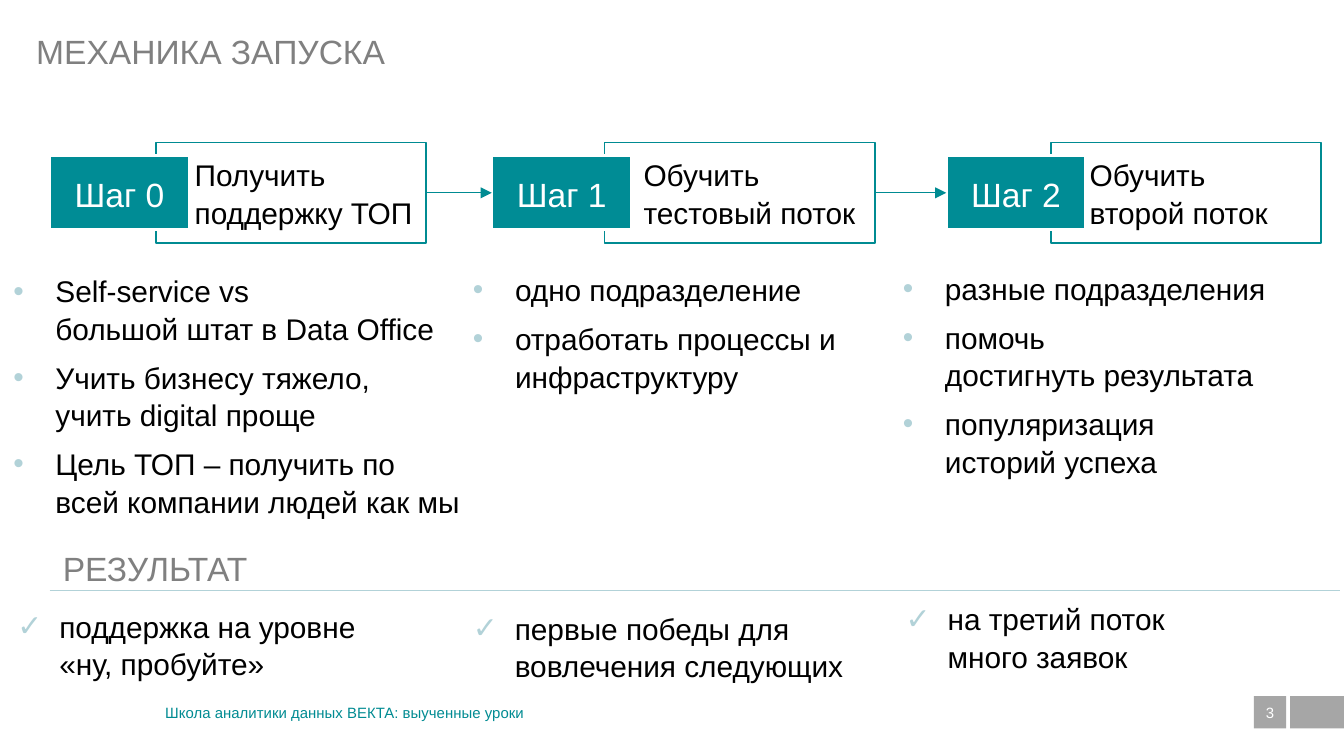
"""Build the launch mechanics slide with its three steps and their results."""
from dataclasses import dataclass

from lxml.etree import SubElement
from pptx import Presentation
from pptx.dml.color import RGBColor
from pptx.enum.shapes import MSO_CONNECTOR as Connector, MSO_SHAPE as Preset
from pptx.enum.text import MSO_ANCHOR as Anchor, MSO_AUTO_SIZE as AutoSize, PP_ALIGN as Align
from pptx.oxml.ns import qn
from pptx.util import Pt

TEAL = RGBColor(0x00, 0x8B, 0x92)
TAG_TEAL = RGBColor(0x00, 0x8C, 0x95)
PALE = RGBColor(0xB2, 0xD2, 0xD8)
GREY = RGBColor(0x80, 0x80, 0x80)
BAR_GREY = RGBColor(0xA6, 0xA6, 0xA6)
WHITE = RGBColor(0xFF, 0xFF, 0xFF)
BLACK = RGBColor(0x00, 0x00, 0x00)
FONT = "Arial"
HANGING = 22.5
FOOTER_TOP, FOOTER_HEIGHT = 373, 17.3


@dataclass(frozen=True)
class Box:
    left: float
    top: float
    width: float
    height: float

    def lengths(self) -> tuple:
        return Pt(self.left), Pt(self.top), Pt(self.width), Pt(self.height)


@dataclass(frozen=True)
class Step:
    tag: str
    tag_left: float
    heading: str
    heading_left: float
    placeholder: int
    points: tuple
    points_box: Box
    points_indent: float
    result: str
    result_box: Box


STEPS = (
    Step("Шаг 0", 26.6, "Получить\nподдержку ТОП", 83.5, 1,
         ("Self-service vs\nбольшой штат в Data Office",
          "Учить бизнесу тяжело,\nучить digital проще",
          "Цель ТОП – получить по всей компании людей как мы"),
         Box(0, 141.8, 254.9, 135.4), HANGING,
         "поддержка на уровне\n«ну, пробуйте»", Box(2.2, 321.5, 208.8, 46.1)),
    Step("Шаг 1", 263.5, "Обучить\nтестовый поток", 324, 2,
         ("одно подразделение", "отработать процессы и инфраструктуру"),
         Box(246.2, 141.1, 211, 71.3), HANGING,
         "первые победы для вовлечения следующих", Box(246.2, 322.6, 226.8, 46.1)),
    Step("Шаг 2", 506.9, "Обучить\nвторой поток", 563, 4,
         ("разные подразделения", "помочь\nдостигнуть результата",
          "популяризация\nисторий успеха"),
         Box(445, 140.4, 277.2, 116.6), 54,
         "на третий поток\nмного заявок", Box(478.1, 317.5, 194.4, 46.1)),
)


def write_text(shape, *texts: str, size: float = 16, color: RGBColor = BLACK,
               align=Align.LEFT, anchor=Anchor.TOP, wrap: bool = True, inset: bool = True,
               indent: float = 0, bullet: str = "", gap: float = 0) -> None:
    frame = shape.text_frame
    frame.auto_size = AutoSize.NONE
    frame.word_wrap = wrap
    frame.vertical_anchor = anchor
    frame.margin_left = frame.margin_right = Pt(7.2 if inset else 0)
    frame.margin_top = frame.margin_bottom = Pt(3.6 if inset else 0)
    for index, text in enumerate(texts):
        paragraph = frame.add_paragraph() if index else frame.paragraphs[0]
        paragraph.text = text
        paragraph.alignment = align
        paragraph.line_spacing = 1.05
        paragraph.space_before = Pt(gap if index else 0)
        properties = paragraph._p.get_or_add_pPr()
        properties.set("marL", str(Pt(indent)))
        properties.set("indent", str(Pt(-HANGING if bullet else 0)))
        if bullet:
            bullet_color = SubElement(properties, qn("a:buClr"))
            SubElement(bullet_color, qn("a:srgbClr"), val=str(PALE))
            SubElement(properties, qn("a:buFont"), typeface=FONT)
            SubElement(properties, qn("a:buChar"), char=bullet)
        for font in (paragraph.font, *(run.font for run in paragraph.runs)):
            font.name = FONT
            font.size = Pt(size)
            font.bold = False
            font.color.rgb = color


def place(shape, box: Box):
    shape.left, shape.top, shape.width, shape.height = box.lengths()
    return shape


def add_rectangle(slide, box: Box, fill: RGBColor, line: RGBColor | None = None,
                  line_width: float = 0.75):
    shape = slide.shapes.add_shape(Preset.RECTANGLE, *box.lengths())
    shape.shadow.inherit = False
    shape.fill.solid()
    shape.fill.fore_color.rgb = fill
    if line is None:
        shape.line.fill.background()
    else:
        shape.line.color.rgb = line
        shape.line.width = Pt(line_width)
    return shape


def add_line(slide, start: tuple, end: tuple, color: RGBColor, width: float):
    line = slide.shapes.add_connector(Connector.STRAIGHT, *map(Pt, start + end))
    line.line.color.rgb = color
    line.line.width = Pt(width)
    SubElement(line._element.spPr, qn("a:effectLst"))
    return line


def add_arrow(slide, source, target) -> None:
    arrow = add_line(slide, (0, 0), (0, 0), TEAL, 0.75)
    arrow.begin_connect(source, 3)
    arrow.end_connect(target, 1)
    SubElement(arrow.line._get_or_add_ln(), qn("a:tailEnd"), type="triangle")


def add_step(slide, step: Step) -> tuple:
    heading = add_rectangle(slide, Box(step.heading_left, 76.3, 144.7, 54), WHITE, TEAL)
    write_text(heading, *step.heading.split("\n"), anchor=Anchor.MIDDLE, wrap=False, indent=13.7)
    tag = add_rectangle(slide, Box(step.tag_left, 83.5, 74.9, 39.6), TAG_TEAL, WHITE, 1.5)
    write_text(tag, step.tag, size=18, color=WHITE, align=Align.CENTER, anchor=Anchor.MIDDLE)
    points = place(slide.placeholders[step.placeholder], step.points_box)
    write_text(points, *step.points, indent=step.points_indent, bullet="•", gap=6)
    result = slide.shapes.add_textbox(*step.result_box.lengths())
    write_text(result, step.result, indent=HANGING, bullet="✓")
    return tag, heading


def add_footer(slide) -> None:
    add_rectangle(slide, Box(691.2, FOOTER_TOP, 28.8, FOOTER_HEIGHT), BAR_GREY)
    number = add_rectangle(slide, Box(671.8, FOOTER_TOP, 17.3, FOOTER_HEIGHT), BAR_GREY)
    write_text(number, "3", size=8, color=WHITE, align=Align.CENTER,
               anchor=Anchor.MIDDLE, inset=False)
    footer = slide.shapes.add_textbox(*Box(81.4, FOOTER_TOP, 588.2, FOOTER_HEIGHT).lengths())
    write_text(footer, "Школа аналитики данных ВЕКТА: выученные уроки", size=8, color=TEAL,
               anchor=Anchor.MIDDLE)


def main() -> None:
    presentation = Presentation()
    presentation.slide_width, presentation.slide_height = Pt(720), Pt(405)
    slide = presentation.slides.add_slide(presentation.slide_layouts[4])
    unused = slide.placeholders[3]._element
    unused.getparent().remove(unused)

    title = place(slide.shapes.title, Box(19.4, 10.1, 601.2, 33.8))
    write_text(title, "МЕХАНИКА ЗАПУСКА", size=18, color=GREY,
               anchor=Anchor.MIDDLE, inset=False)
    add_footer(slide)

    drawn = [add_step(slide, step) for step in STEPS]
    for (_, heading), (tag, _) in zip(drawn, drawn[1:]):
        add_arrow(slide, heading, tag)

    add_line(slide, (26.6, 316.1), (717.8, 316.1), PALE, 0.5)
    result_title = slide.shapes.add_textbox(*Box(26.6, 288.7, 114.5, 28.8).lengths())
    write_text(result_title, "РЕЗУЛЬТАТ", size=18, color=GREY, wrap=False)
    presentation.save("out.pptx")


if __name__ == "__main__":
    main()
